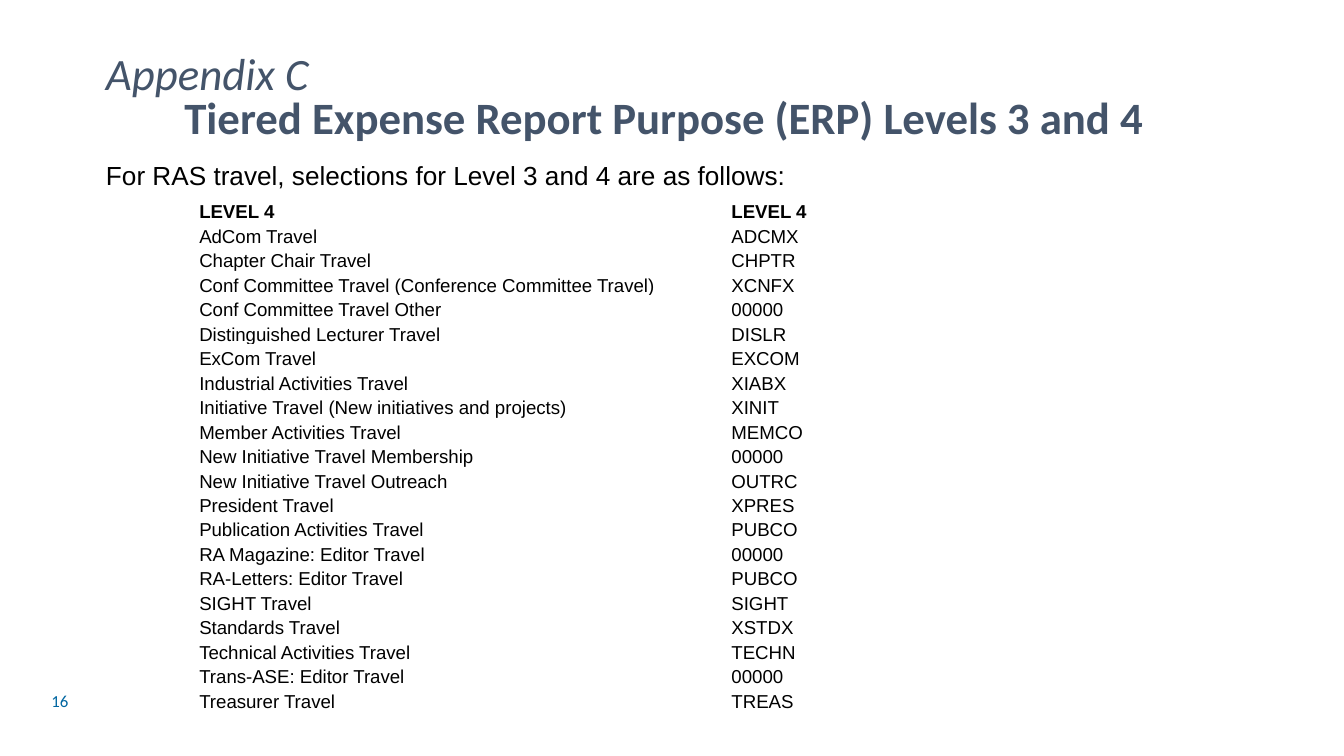
import pptx
import pptx.util
import pptx.dml.color
import pptx.enum.text

WIDTH = pptx.util.Inches(10)
HEIGHT = WIDTH * 9 // 16
COLORS = {"heading": "44546A", "body": "000000", "number": "0066A1"}
ANCHOR = pptx.enum.text.MSO_ANCHOR
ALIGN = pptx.enum.text.PP_ALIGN
LEVELS = [
    ("LEVEL 4", "LEVEL 4"),
    ("AdCom Travel", "ADCMX"),
    ("Chapter Chair Travel", "CHPTR"),
    ("Conf Committee Travel (Conference Committee Travel)", "XCNFX"),
    ("Conf Committee Travel Other", "00000"),
    ("Distinguished Lecturer Travel", "DISLR"),
    ("ExCom Travel", "EXCOM"),
    ("Industrial Activities Travel", "XIABX"),
    ("Initiative Travel (New initiatives and projects)", "XINIT"),
    ("Member Activities Travel", "MEMCO"),
    ("New Initiative Travel Membership", "00000"),
    ("New Initiative Travel Outreach", "OUTRC"),
    ("President Travel", "XPRES"),
    ("Publication Activities Travel", "PUBCO"),
    ("RA Magazine: Editor Travel", "00000"),
    ("RA-Letters: Editor Travel", "PUBCO"),
    ("SIGHT Travel", "SIGHT"),
    ("Standards Travel", "XSTDX"),
    ("Technical Activities Travel", "TECHN"),
    ("Trans-ASE: Editor Travel", "00000"),
    ("Treasurer Travel", "TREAS"),
]


def place(left, top, width, height):
    """Turn percentages of the slide's width and height into lengths."""
    return (int(WIDTH * left / 100), int(HEIGHT * top / 100),
            int(WIDTH * width / 100), int(HEIGHT * height / 100))


def style(p, size, name, color, bold=False, italic=False):
    """Set the font of a whole paragraph."""
    p.font.size = pptx.util.Pt(size)
    p.font.name = name
    p.font.bold = bold
    p.font.italic = italic
    p.font.color.rgb = pptx.dml.color.RGBColor.from_string(COLORS[color])


def add_text(s, text, box, insets, font, align=ALIGN.LEFT, anchor=ANCHOR.TOP):
    """Add a wrapped text box holding one paragraph."""
    tf = s.shapes.add_textbox(*place(*box)).text_frame
    tf.word_wrap = True
    tf.vertical_anchor = anchor
    tf.margin_left = tf.margin_right = pptx.util.Inches(insets[0])
    tf.margin_top = tf.margin_bottom = pptx.util.Inches(insets[1])
    p = tf.paragraphs[0]
    p.text = text
    p.alignment = align
    style(p, *font)


def add_levels(s, box, shares):
    """Add the plain table of travel purposes and their codes."""
    left, top, width, height = place(*box)
    table = s.shapes.add_table(len(LEVELS), len(shares), left, top, width, height).table
    table.first_row = table.horz_banding = False
    for column, share in zip(table.columns, shares):
        column.width = int(WIDTH * share / 100)
    for i, (row, texts) in enumerate(zip(table.rows, LEVELS)):
        row.height = height // len(LEVELS)
        for cell, text in zip(row.cells, texts):
            cell.fill.background()
            cell.vertical_anchor = ANCHOR.BOTTOM
            cell.margin_left = cell.margin_right = cell.margin_top = pptx.util.Inches(0.01)
            cell.margin_bottom = 0
            p = cell.text_frame.paragraphs[0]
            p.text = text
            style(p, 10, "Arial", "body", bold=i == 0)


def main():
    """Build the slide and save it."""
    prs = pptx.Presentation()
    prs.slide_width, prs.slide_height = WIDTH, HEIGHT
    s = prs.slides.add_slide(prs.slide_layouts[6])
    add_text(s, "16", (3.13, 90.04, 16.9, 5.33), (0.07, 0.04),
             (9, "Calibri", "number"), anchor=ANCHOR.MIDDLE)
    add_text(s, "Tiered Expense Report Purpose (ERP) Levels 3 and 4",
             (6.9, 10.13, 85, 10.13), (0.1, 0.1),
             (24, "Calibri", "heading", True), align=ALIGN.CENTER)
    add_text(s, "Appendix C", (6.9, 4.27, 85, 8.18), (0.1, 0.1),
             (24, "Calibri", "heading", False, True))
    add_text(s, "For RAS travel, selections for Level 3 and 4 are as follows:",
             (6.9, 20.27, 84.2, 13.16), (0.1, 0.05), (14, "Arial", "body"))
    add_levels(s, (14.73, 26.2, 63, 68.1), (39.6, 23.4))
    prs.save("out.pptx")


if __name__ == "__main__":
    main()
